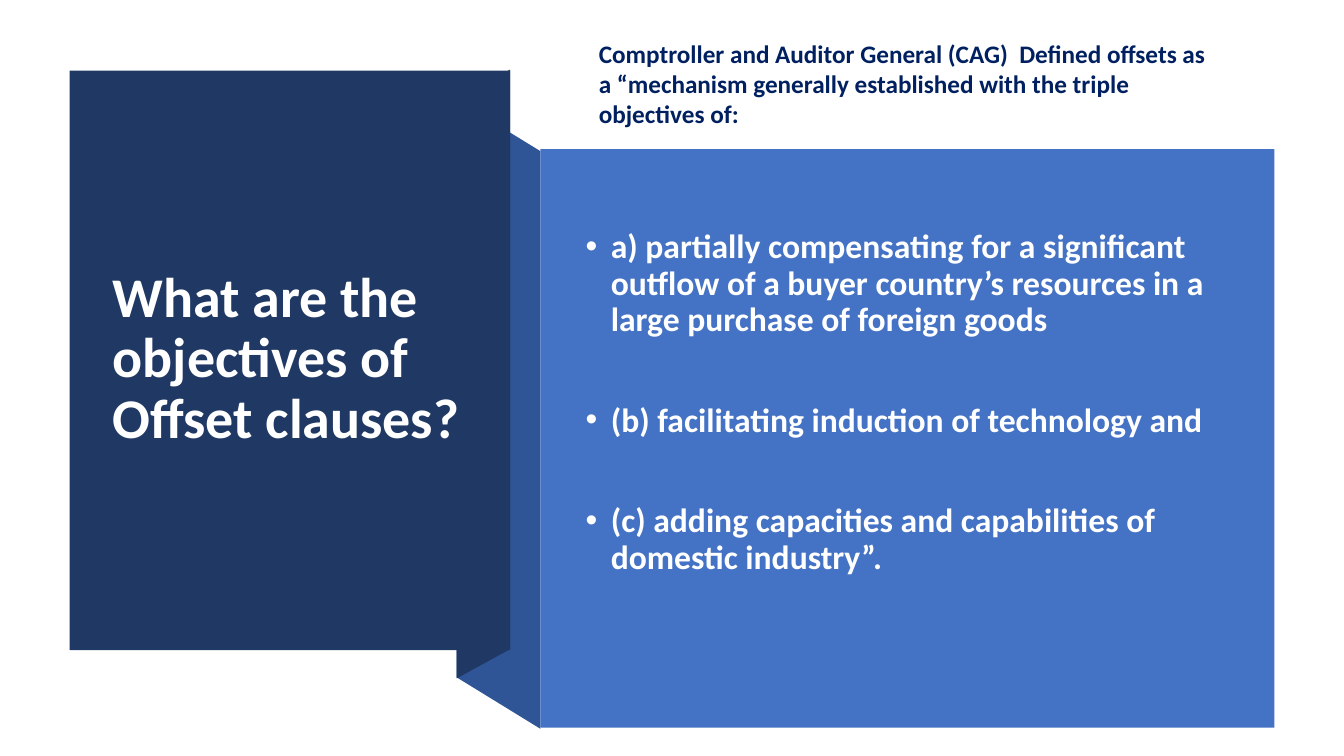
from dataclasses import dataclass

from lxml.etree import SubElement
from pptx import Presentation
from pptx.dml.color import RGBColor
from pptx.enum.shapes import MSO_SHAPE as Preset
from pptx.enum.text import MSO_ANCHOR as Anchor
from pptx.enum.text import PP_ALIGN as Align
from pptx.oxml.ns import qn
from pptx.util import Emu, Inches, Pt

# Content
TITLE = "What are the objectives of Offset clauses?"
INTRO = ("Comptroller and Auditor General (CAG)  Defined offsets as a "
         "“mechanism generally established with the triple objectives of:")
OBJECTIVES = [
    "a) partially compensating for a significant outflow of a buyer "
    "country’s resources in a large purchase of foreign goods",
    "(b) facilitating induction of technology and",
    "(c) adding capacities and capabilities of domestic industry”.",
]


@dataclass(frozen=True)
class Theme:
    font: str = "Calibri"
    navy: str = "203864"
    fold: str = "2F5597"
    blue: str = "4472C4"
    ink: str = "002060"
    white: str = "FFFFFF"
    title: int = 40
    body: int = 24
    intro: int = 18


THEME = Theme()

# Grid: 1333 columns by 750 rows, with the edges that the panels share
COLUMNS, ROWS = 1333, 750
FOLD_LEFT, TITLE_RIGHT, BODY_LEFT = 453, 506, 536
TITLE_PANEL = (69, 70, TITLE_RIGHT - 69, 575)
BODY_PANEL = (BODY_LEFT, 148, 728, 574)
TITLE_BOX = (102, 107, 371, 499)
BODY_BOX = (571, 188, 651, 424)
INTRO_BOX = (584, 33, 622, 131)
FOLD_BACK = [(BODY_LEFT, 723), (FOLD_LEFT, 672), (FOLD_LEFT, 99), (BODY_LEFT, 150)]
FOLD_FRONT = [(TITLE_RIGHT, 644), (FOLD_LEFT, 673), (FOLD_LEFT, 98), (TITLE_RIGHT, 69)]

deck = Presentation()
deck.slide_width, deck.slide_height = Inches(13.33), Inches(7.5)
page = deck.slides.add_slide(deck.slide_layouts[6])
shapes = page.shapes


def place(column, row):
    return (Emu(deck.slide_width * column // COLUMNS),
            Emu(deck.slide_height * row // ROWS))


def frame(left, top, width, height):
    return *place(left, top), *place(width, height)


def paint(shape, color):
    shape.shadow.inherit = False
    shape.fill.solid()
    shape.fill.fore_color.rgb = RGBColor.from_string(color)
    shape.line.fill.background()


def add_panel(area, color):
    paint(shapes.add_shape(Preset.RECTANGLE, *frame(*area)), color)


def add_fold(corners, color):
    first, *others = [place(*corner) for corner in corners]
    builder = shapes.build_freeform(*first, scale=1.0)
    builder.add_line_segments(others, close=True)
    paint(builder.convert_to_shape(), color)


def add_bullet(para):
    properties = para._p.get_or_add_pPr()
    properties.set("marL", str(Inches(0.25)))
    properties.set("indent", str(-Inches(0.25)))
    SubElement(properties, qn("a:buFont"), typeface="Arial")
    SubElement(properties, qn("a:buChar"), char="•")


def add_text(lines, area, *, size, color, anchor=Anchor.MIDDLE, spacing=0.9,
             before=0, gap=0, bullets=False):
    box = shapes.add_textbox(*frame(*area))
    text = box.text_frame
    text.word_wrap = True
    text.vertical_anchor = anchor
    for index, line in enumerate(lines):
        para = text.add_paragraph() if index else text.paragraphs[0]
        para.alignment = Align.LEFT
        para.line_spacing = spacing
        para.space_before = Pt(gap if index else before)
        if bullets:
            add_bullet(para)
        span = para.add_run()
        span.text = line
        span.font.name = THEME.font
        span.font.size = Pt(size)
        span.font.bold = True
        span.font.color.rgb = RGBColor.from_string(color)


# Folded ribbon and panels, from back to front
add_fold(FOLD_BACK, THEME.fold)
add_fold(FOLD_FRONT, THEME.navy)
add_panel(TITLE_PANEL, THEME.navy)
add_panel(BODY_PANEL, THEME.blue)

# Text
add_text([TITLE], TITLE_BOX, size=THEME.title, color=THEME.white)
add_text(OBJECTIVES, BODY_BOX, size=THEME.body, color=THEME.white,
         before=10, gap=46, bullets=True)
add_text([INTRO], INTRO_BOX, size=THEME.intro, color=THEME.ink,
         anchor=Anchor.TOP, spacing=1.0)

deck.save("out.pptx")
